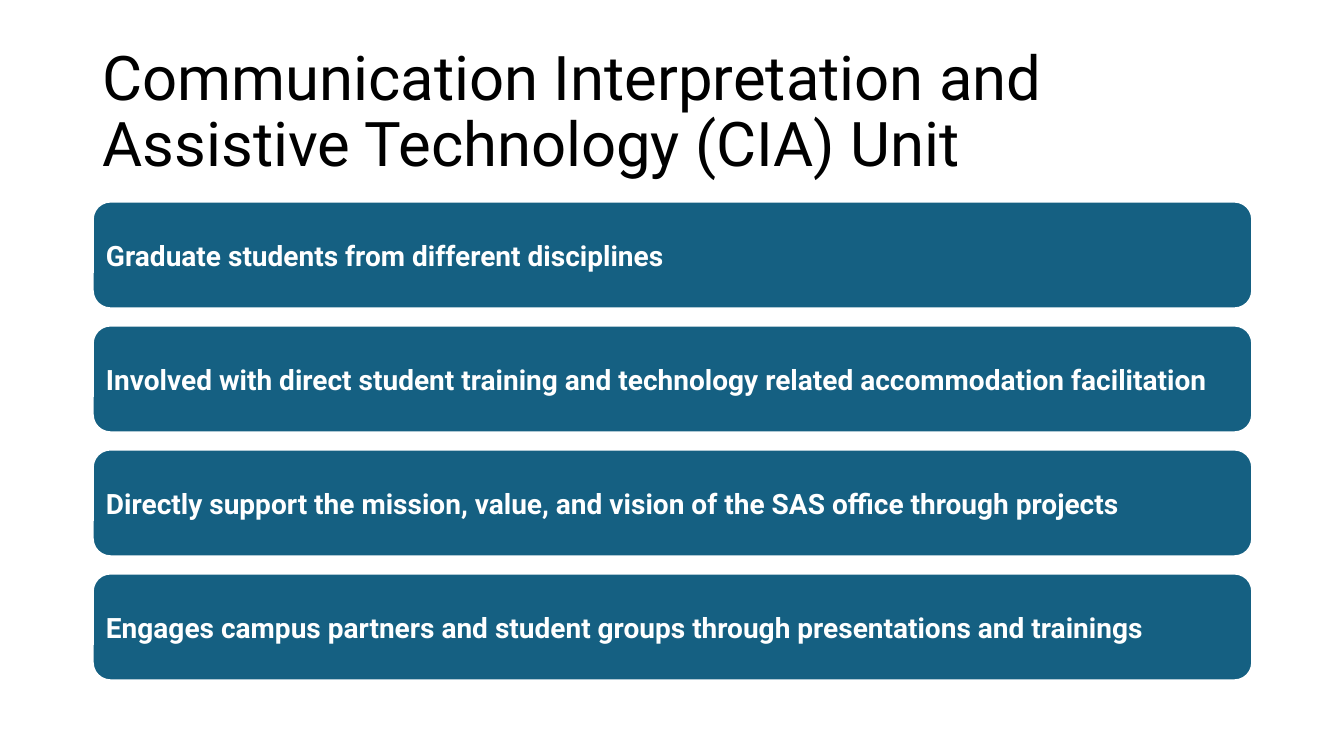
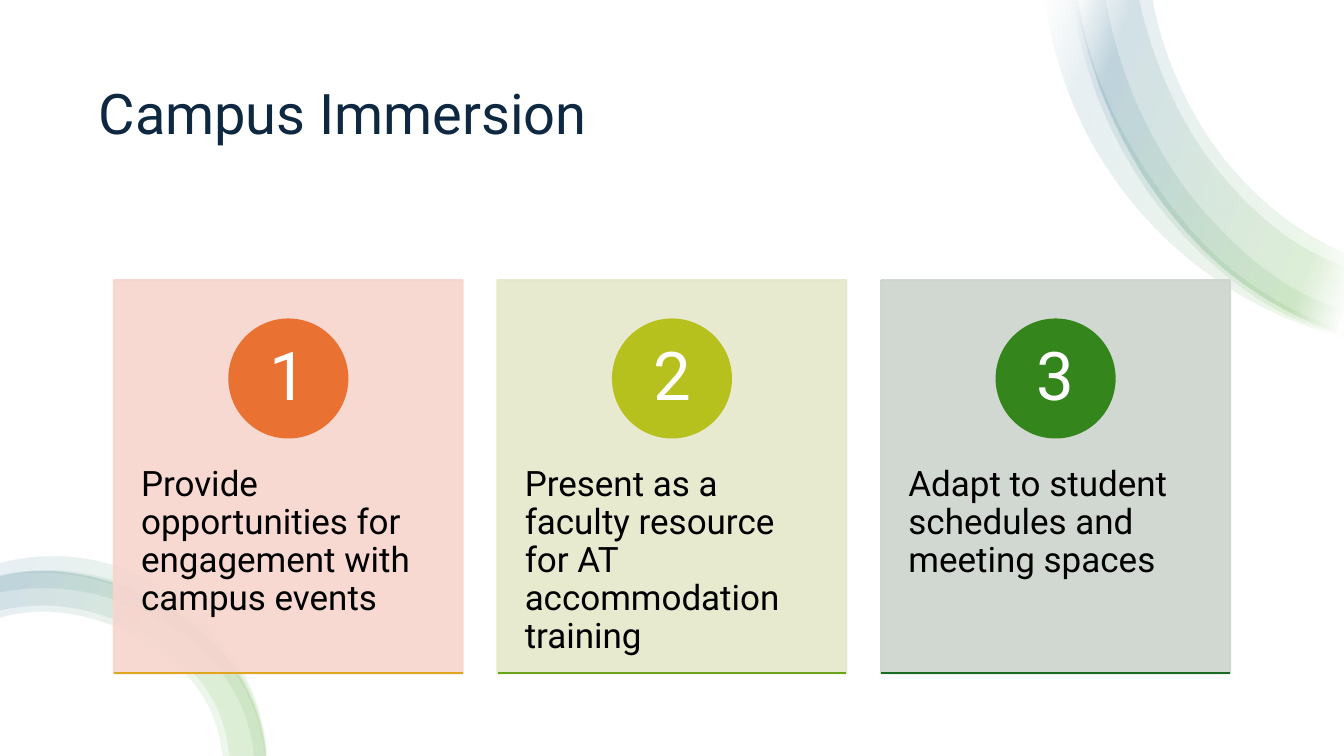
import pptx
import pptx.util
import pptx.dml.color
import pptx.enum.shapes
import pptx.enum.text
from pptx.oxml.ns import qn
from lxml import etree

Inches, Pt = pptx.util.Inches, pptx.util.Pt
SHAPE = pptx.enum.shapes.MSO_SHAPE
ALIGN = pptx.enum.text.PP_ALIGN
ANCHOR = pptx.enum.text.MSO_ANCHOR

FONT = "Roboto"
BLACK, WHITE, NAVY, BLUE, GREEN = "000000", "FFFFFF", "0E2841", "156082", "4EA72E"
WIDE, HIGH = 13.33, 7.5

BARS = [
    "Graduate students from different disciplines",
    "Involved with direct student training and technology related accommodation facilitation",
    "Directly support the mission, value, and vision of the SAS office through projects",
    "Engages campus partners and student groups through presentations and trainings",
]
CARDS = [
    ("Provide opportunities for engagement with campus events", "F7D5CE", "E97132", "E0A61D"),
    ("Present as a faculty resource for AT accommodation training", "E5E8CA", "B7C11E", "6BA31D"),
    ("Adapt to student schedules and meeting spaces", "CCD4CD", "34861C", "196B24"),
]

TOP_FADE = [(2, WHITE), (16, GREEN), (85, BLUE), (100, WHITE)]
LOW_FADE = [(30, GREEN), (95, BLUE)]
TOP_EDGE = [(10.68, 0), (10.99, 1.07), (11.52, 2), (12.23, 2.74), (13.33, 3.32)]
LOW_EDGE = [(0, 5.72), (0.4, 5.67), (1.17, 5.8), (1.85, 6.16), (2.36, 6.69), (2.63, 7.5)]
TOP_BANDS = [
    ([(10.37, 0), (10.77, 1.31), (11.65, 2.45), (12.51, 3.04), (13.32, 3.35)],
     [(13.32, 3.28), (12.29, 2.73), (11.39, 1.73), (10.92, 0.84), (10.69, 0)]),
    (TOP_EDGE, [(13.33, 2.51), (13.07, 2.38), (12.19, 1.64), (11.58, 0.55), (11.43, 0)]),
    ([(10.64, 0), (10.98, 1.19), (11.73, 2.33), (12.79, 3.14), (13.32, 3.33)],
     [(13.32, 3.08), (12.9, 2.9), (11.95, 2.11), (11.28, 1.04), (10.97, 0)]),
    (TOP_EDGE, [(13.32, 2.64), (13.01, 2.5), (12.1, 1.72), (11.47, 0.59), (11.3, 0)]),
]
LOW_BANDS = [
    (LOW_EDGE, [(2.2, 7.5), (2.06, 7), (1.66, 6.52), (1.07, 6.19), (0.4, 6.07), (0, 6.13)]),
    (LOW_EDGE, [(2.27, 7.5), (2.12, 6.97), (1.7, 6.47), (1.09, 6.13), (0.4, 6.01), (0, 6.06)]),
    ([(0, 5.71), (0.5, 5.66), (1.42, 5.87), (2.03, 6.27), (2.47, 6.85), (2.63, 7.5)],
     [(2.51, 7.5), (2.34, 6.91), (1.92, 6.39), (1.34, 6.03), (0.67, 5.85), (0, 5.88)]),
    ([(0, 5.59), (0.51, 5.52), (1.48, 5.75), (2.09, 6.23), (2.5, 6.87), (2.64, 7.5)],
     [(2.62, 7.5), (2.45, 6.89), (2, 6.31), (1.39, 5.91), (0.69, 5.7), (0, 5.72)]),
]


def color(code):
    return pptx.dml.color.RGBColor.from_string(code)


def fade(node, pct):
    etree.SubElement(node, qn("a:alpha"), val=str(pct * 1000))


def write(shape, text, size, tint, pads=(0.1, 0.05, 0.1, 0.05), align=ALIGN.LEFT,
          anchor=ANCHOR.MIDDLE, bold=False, pitch=0.9):
    frame = shape.text_frame
    frame.word_wrap = True
    frame.vertical_anchor = anchor
    (frame.margin_left, frame.margin_top,
     frame.margin_right, frame.margin_bottom) = [Inches(pad) for pad in pads]
    para = frame.paragraphs[0]
    para.alignment = align
    para.line_spacing = pitch
    run = para.add_run()
    run.text = text
    font = run.font
    font.name, font.size, font.bold = FONT, Pt(size), bold
    font.color.rgb = color(tint)


def title(slide, text, box, size, tint):
    write(slide.shapes.add_textbox(*map(Inches, box)), text, size, tint)


def block(slide, kind, box, fill, edge=None, alpha=100):
    shape = slide.shapes.add_shape(kind, *map(Inches, box))
    shape.shadow.inherit = False
    shape.fill.solid()
    shape.fill.fore_color.rgb = color(fill)
    if edge:
        shape.line.color.rgb = color(edge)
        shape.line.width = Pt(1.5)
    else:
        shape.line.fill.background()
    if alpha < 100:
        for node in shape._element.spPr.iter(qn("a:srgbClr")):
            fade(node, alpha)
    return shape


def rule(slide, left, top, width, tint):
    line = slide.shapes.add_connector(
        pptx.enum.shapes.MSO_CONNECTOR.STRAIGHT,
        Inches(left), Inches(top), Inches(left + width), Inches(top))
    line.line.color.rgb = color(tint)
    line.line.width = Pt(1.5)
    etree.SubElement(line._element.spPr, qn("a:effectLst"))


def curve(knots):
    spots = [complex(*knot) for knot in knots]
    gaps = [b - a for a, b in zip(spots, spots[1:])]
    turns = [a / abs(a) ** 2 + b / abs(b) ** 2 for a, b in zip(gaps, gaps[1:])]
    turns = [turn / abs(turn) for turn in turns]
    first, last = [gap / abs(gap) for gap in (gaps[0], gaps[-1])]
    turns = [first ** 2 * turns[0].conjugate(), *turns, last ** 2 * turns[-1].conjugate()]
    return [(a + s * abs(gap) / 3, b - t * abs(gap) / 3, b)
            for a, b, gap, s, t in zip(spots, spots[1:], gaps, turns, turns[1:])]


def ribbon(slide, outer, inner, tints):
    points = [(Inches(x), Inches(y)) for x, y in outer + inner]
    pen = slide.shapes.build_freeform(*points[0], scale=1.0)
    pen.add_line_segments(points[1:], close=True)
    shape = pen.convert_to_shape()
    props = shape._element.spPr
    sides = list(props.iter(qn("a:lnTo")))
    del sides[len(outer) - 1]
    for side, arc in zip(sides, curve(outer) + curve(inner)):
        bend = etree.Element(qn("a:cubicBezTo"))
        for spot in arc:
            etree.SubElement(bend, qn("a:pt"), x=str(Inches(spot.real) - shape.left),
                             y=str(Inches(spot.imag) - shape.top))
        side.getparent().replace(side, bend)
    shape.shadow.inherit = False
    shape.line.fill.background()
    shape.fill.gradient()
    shape.fill.gradient_angle = 160
    stops = props.find(".//" + qn("a:gsLst"))
    for old in list(stops):
        stops.remove(old)
    for pos, code in tints:
        stop = etree.SubElement(stops, qn("a:gs"), pos=str(pos * 1000))
        fade(etree.SubElement(stop, qn("a:srgbClr"), val=code), 10)


def unit(slide):
    for i, text in enumerate(BARS):
        bar = block(slide, SHAPE.ROUNDED_RECTANGLE, (0.92, 2 + i * 1.23, 11.5, 1.06), BLUE, WHITE)
        write(bar, text, 20, WHITE, pads=(0.08,) * 4, bold=True, pitch=1.0)
    title(slide, "Communication Interpretation and Assistive Technology (CIA) Unit",
          (0.92, 0.4, 11.5, 1.45), 44, BLACK)


def campus(slide):
    block(slide, SHAPE.RECTANGLE, (0, 0, WIDE, HIGH), WHITE)
    for bands, tints in ((TOP_BANDS, TOP_FADE), (LOW_BANDS, LOW_FADE)):
        for outer, inner in bands:
            ribbon(slide, outer, inner, tints)
    side, top, width, height, disc = 1.13, 2.78, 3.46, 3.9, 1.17
    step = (WIDE - 2 * side - width) / (len(CARDS) - 1)
    for i, (text, pale, strong, base) in enumerate(CARDS):
        left = side + i * step
        card = block(slide, SHAPE.RECTANGLE, (left, top, width, height), pale, pale, 90)
        write(card, text, 25, BLACK, pads=(0.27, 1.85, 0.27, 0.08), anchor=ANCHOR.TOP)
        dot = block(slide, SHAPE.OVAL, (left + (width - disc) / 2, 3.17, disc, disc), strong, strong)
        write(dot, str(i + 1), 48, WHITE, pads=(0.09, 0.01, 0.09, 0.01), align=ALIGN.CENTER)
        rule(slide, left, top + height, width, base)
    title(slide, "Campus Immersion", (0.88, 0.5, 11.57, 1.3), 40, NAVY)


def main():
    deck = pptx.Presentation()
    deck.slide_width, deck.slide_height = Inches(WIDE), Inches(HIGH)
    for draw in (unit, campus):
        draw(deck.slides.add_slide(deck.slide_layouts[6]))
    deck.save("out.pptx")


if __name__ == "__main__":
    main()
